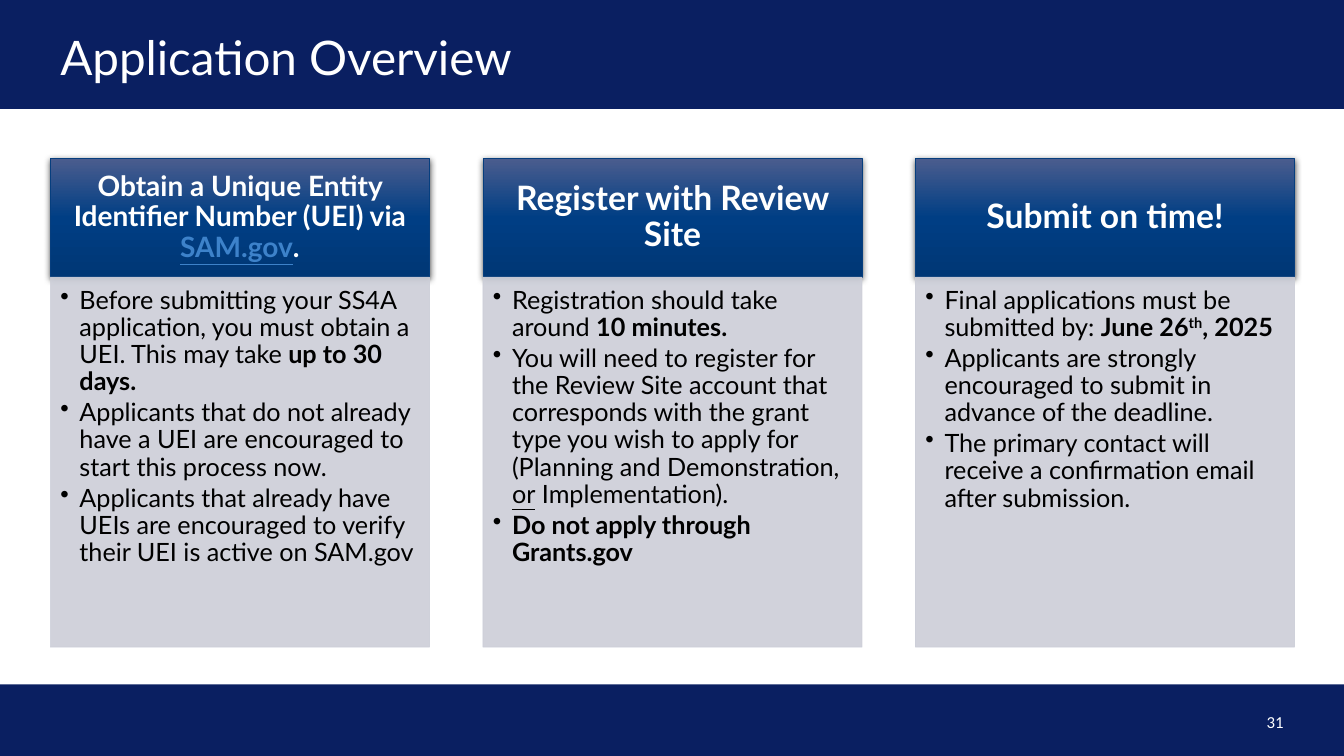
from dataclasses import dataclass

import pptx
import pptx.dml.color
import pptx.enum.shapes
import pptx.enum.text
import pptx.oxml.ns
import pptx.util
from copy import deepcopy
from lxml import etree
from pptx.util import Inches, Pt

ALIGN = pptx.enum.text.PP_ALIGN
ANCHOR = pptx.enum.text.MSO_ANCHOR
qn = pptx.oxml.ns.qn


@dataclass(frozen=True)
class Theme:
    navy: str = "0A1F61"
    white: str = "FFFFFF"
    black: str = "000000"
    link: str = "3D82CA"
    header_line: str = "063E7E"
    header_stops: tuple = ((0, "4B5D8E"), (0.5, "003E84"), (1, "003775"))
    panel: str = "CCCED8"
    font: str = "Lato"
    number_font: str = "Calibri"
    title_size: int = 34
    long_header_size: int = 20
    header_size: int = 24
    body_size: int = 18
    number_size: int = 12


THEME = Theme()
SLIDE_WIDTH = 13.33
COLUMN_LEFT, COLUMN_PITCH, COLUMN_WIDTH = 0.5, 4.29, 3.76
HEADER_TOP, HEADER_HEIGHT, PANEL_HEIGHT = 1.57, 1.18, 3.67

# Each column: header spans, header size, bullets; a span is (text, style)
COLUMNS = [
    (
        [("Obtain a Unique Entity Identifier Number (UEI) via ", "b"),
         ("SAM.gov", "b link"), (".", "b")],
        THEME.long_header_size,
        [
            [("Before submitting your SS4A application, you must obtain a UEI. "
              "This may take", ""), (" up to 30 days.", "b")],
            [("Applicants that do not already have a UEI are encouraged to "
              "start this process now.", "")],
            [("Applicants that already have UEIs are encouraged to verify "
              "their UEI is active on SAM.gov", "")],
        ],
    ),
    (
        [("Register with Review Site", "b")],
        THEME.header_size,
        [
            [("Registration should take around ", ""), ("10 minutes.", "b")],
            [("You will need to register for the Review Site account that "
              "corresponds with the grant type you wish to apply for "
              "(Planning and Demonstration, ", ""),
             ("or", "u"), (" Implementation).", "")],
            [("Do not apply through Grants.gov", "b")],
        ],
    ),
    (
        [("Submit on time!", "b")],
        THEME.header_size,
        [
            [("Final applications must be submitted by: ", ""),
             ("June 26", "b"), ("th", "b super"), (", 2025", "b")],
            [("Applicants are strongly encouraged to submit in advance of "
              "the deadline.", "")],
            [("The primary contact will receive a confirmation email after "
              "submission.", "")],
        ],
    ),
]


def rgb(value):
    return pptx.dml.color.RGBColor.from_string(value)


def add_rect(slide, left, top, width, height):
    box = slide.shapes.add_shape(
        pptx.enum.shapes.MSO_SHAPE.RECTANGLE,
        Inches(left), Inches(top), Inches(width), Inches(height))
    box.shadow.inherit = False
    return box


def add_bar(slide, top, height):
    bar = add_rect(slide, 0, top, SLIDE_WIDTH, height)
    bar.fill.solid()
    bar.fill.fore_color.rgb = rgb(THEME.navy)
    bar.line.fill.background()


def set_frame(box, anchor, insets):
    frame = box.text_frame
    frame.word_wrap = True
    frame.vertical_anchor = anchor
    (frame.margin_left, frame.margin_top,
     frame.margin_right, frame.margin_bottom) = map(Inches, insets)
    return frame


def add_spans(para, spans, size, color, font=THEME.font):
    for text, style in spans:
        marks = style.split()
        span = para.add_run()
        span.text = text
        span.font.name = font
        span.font.size = Pt(size)
        span.font.bold = "b" in marks
        span.font.underline = "u" in marks or "link" in marks
        span.font.color.rgb = rgb(THEME.link if "link" in marks else color)
        if "super" in marks:
            span.font._element.set("baseline", "30000")


def add_label(slide, place, text, size, font, align):
    box = slide.shapes.add_textbox(*map(Inches, place))
    para = set_frame(box, ANCHOR.MIDDLE, (0.1, 0.05, 0.1, 0.05)).paragraphs[0]
    para.alignment = align
    add_spans(para, [(text, "")], size, THEME.white, font)
    return para


def add_alpha(color_parent, percent):
    for color in color_parent.iter(qn("a:srgbClr")):
        etree.SubElement(color, qn("a:alpha"), val=str(percent * 1000))


def add_header(slide, left, spans, size):
    box = add_rect(slide, left, HEADER_TOP, COLUMN_WIDTH, HEADER_HEIGHT)
    # Three-stop gradient, running downwards
    box.fill.gradient()
    box.fill.gradient_angle = 270
    stop_list = box._element.spPr.find(".//" + qn("a:gsLst"))
    stop_list.append(deepcopy(stop_list[0]))
    for stop, (position, color) in zip(box.fill.gradient_stops, THEME.header_stops):
        stop.position = position
        stop.color.rgb = rgb(color)
    box.line.color.rgb = rgb(THEME.header_line)
    box.line.width = Pt(0.5)
    # Soft drop shadow
    effects = box._element.spPr.find(qn("a:effectLst"))
    shadow = etree.SubElement(
        effects, qn("a:outerShdw"), blurRad=str(Pt(4.5)), dist=str(Pt(1.5)),
        dir="5400000", rotWithShape="0")
    etree.SubElement(shadow, qn("a:srgbClr"), val=THEME.black)
    add_alpha(shadow, 63)

    inset = size / 125
    frame = set_frame(box, ANCHOR.MIDDLE, (inset, 0.1, inset, 0.1))
    para = frame.paragraphs[0]
    para.alignment = ALIGN.CENTER
    para.line_spacing = 0.9
    add_spans(para, spans, size, THEME.white)


def add_panel(slide, left, bullets):
    box = add_rect(slide, left, HEADER_TOP + HEADER_HEIGHT, COLUMN_WIDTH, PANEL_HEIGHT)
    box.fill.solid()
    box.fill.fore_color.rgb = rgb(THEME.panel)
    box.line.color.rgb = rgb(THEME.panel)
    box.line.width = Pt(0.5)
    add_alpha(box._element.spPr, 90)

    frame = set_frame(box, ANCHOR.TOP, (0.1, 0.1, 0.14, 0.16))
    for index, spans in enumerate(bullets):
        para = frame.add_paragraph() if index else frame.paragraphs[0]
        properties = para._p.get_or_add_pPr()
        properties.set("marL", str(Inches(0.19)))
        properties.set("indent", str(Inches(-0.19)))
        bullet_color = etree.SubElement(properties, qn("a:buClr"))
        etree.SubElement(bullet_color, qn("a:srgbClr"), val=THEME.black)
        etree.SubElement(properties, qn("a:buChar"), char="•")
        para.alignment = ALIGN.LEFT
        para.line_spacing = 0.9
        para.space_after = Pt(0.15 * THEME.body_size)
        add_spans(para, spans, THEME.body_size, THEME.black)


def main():
    deck = pptx.Presentation()
    deck.slide_width, deck.slide_height = Inches(SLIDE_WIDTH), Inches(7.5)
    slide = deck.slides.add_slide(deck.slide_layouts[6])

    # Bars, title and page number
    add_bar(slide, 6.79, 0.71)
    add_bar(slide, 0, 1.08)
    title = add_label(slide, (0.5, 0, 12.33, 1.08), "Application Overview",
                      THEME.title_size, THEME.font, ALIGN.LEFT)
    title.line_spacing = 1.08
    add_label(slide, (9.83, 7.04, 3, 0.25), "31",
              THEME.number_size, THEME.number_font, ALIGN.RIGHT)

    # Three columns
    for index, (header, size, bullets) in enumerate(COLUMNS):
        left = COLUMN_LEFT + index * COLUMN_PITCH
        add_header(slide, left, header, size)
        add_panel(slide, left, bullets)

    deck.save("out.pptx")


if __name__ == "__main__":
    main()
